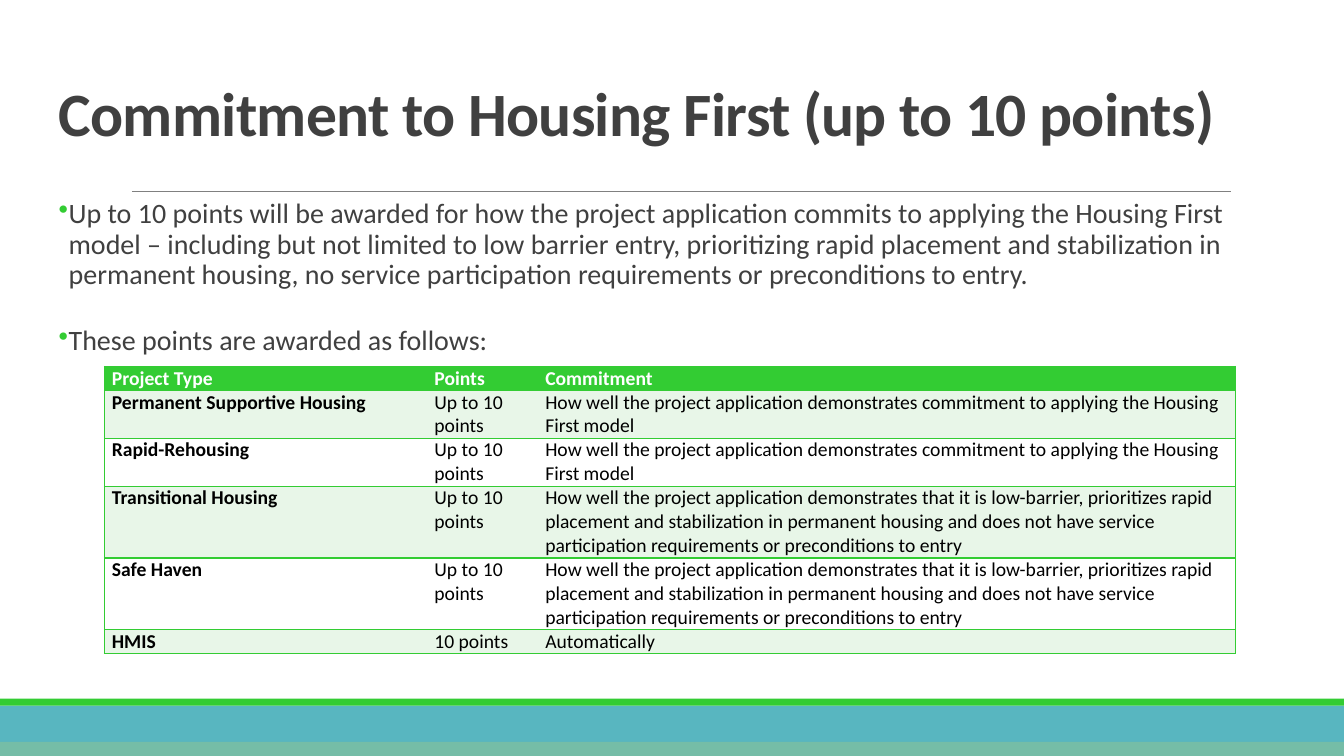
"""Build the slide on scoring the commitment to Housing First."""
from dataclasses import dataclass

import lxml.etree
import pptx
import pptx.dml.color
import pptx.enum.shapes
import pptx.enum.text
import pptx.oxml.ns
import pptx.util

Pt = pptx.util.Pt
qn = pptx.oxml.ns.qn
SubElement = lxml.etree.SubElement


@dataclass(frozen=True)
class Theme:
    font: str = "Calibri"
    green: str = "33CC33"
    pale_green: str = "E8F6E8"
    blue: str = "58B6C0"
    teal: str = "75BDA7"
    gray: str = "808080"
    ink: str = "404040"
    black: str = "000000"
    white: str = "FFFFFF"
    title_size: int = 44
    body_size: int = 20
    table_size: int = 14


theme = Theme()


def rgb(value):
    return pptx.dml.color.RGBColor.from_string(value)


def write(paragraph, text, size, color, bold=False, line_spacing=None,
          after=None, tracking=None, bullet=None):
    if bullet:
        properties = paragraph._p.get_or_add_pPr()
        properties.set("marL", str(Pt(7.2)))
        properties.set("indent", str(-Pt(7.2)))
        bullet_color = SubElement(properties, qn("a:buClr"))
        SubElement(bullet_color, qn("a:srgbClr"), val=theme.green)
        SubElement(properties, qn("a:buChar"), char=bullet)
    if line_spacing is not None:
        paragraph.line_spacing = line_spacing
    if after is not None:
        paragraph.space_after = Pt(after)
    run = paragraph.add_run()
    run.text = text
    run.font.name = theme.font
    run.font.size = Pt(size)
    run.font.bold = bold
    run.font.color.rgb = rgb(color)
    if tracking is not None:
        run._r.get_or_add_rPr().set("spc", str(round(tracking * 100)))


deck = pptx.Presentation()
deck.slide_width = Pt(960)
deck.slide_height = Pt(540)
slide = deck.slides.add_slide(deck.slide_layouts[6])

for top, height, color in [(504, 36, theme.blue), (499, 5, theme.green),
                           (530, 10, theme.teal)]:
    band = slide.shapes.add_shape(pptx.enum.shapes.MSO_SHAPE.RECTANGLE,
                                  0, Pt(top), Pt(960), Pt(height))
    band.shadow.inherit = False
    band.fill.solid()
    band.fill.fore_color.rgb = rgb(color)
    band.line.fill.background()

title_rule = slide.shapes.add_connector(pptx.enum.shapes.MSO_CONNECTOR.STRAIGHT,
                                        Pt(94.3), Pt(136.8), Pt(879), Pt(136.8))
title_rule.line.color.rgb = rgb(theme.gray)
title_rule.line.width = Pt(0.5)
SubElement(title_rule._element.spPr, qn("a:effectLst"))

frames = []
for top, height, anchor in [(46.8, 74.2, pptx.enum.text.MSO_ANCHOR.MIDDLE),
                            (133.2, 347, pptx.enum.text.MSO_ANCHOR.TOP)]:
    frame = slide.shapes.add_textbox(Pt(32.4), Pt(top), Pt(894.2), Pt(height)).text_frame
    frame.word_wrap = True
    frame.vertical_anchor = anchor
    frame.margin_left = frame.margin_right = Pt(9.4)
    frame.margin_top = frame.margin_bottom = Pt(9.4)
    frames.append(frame)
title, body = frames

write(title.paragraphs[0], "Commitment to Housing First (up to 10 points)",
      size=theme.title_size, color=theme.ink, bold=True, line_spacing=0.85, tracking=-0.5)
write(body.paragraphs[0],
      "Up to 10 points will be awarded for how the project application commits to applying "
      "the Housing First model – including but not limited to low barrier entry, prioritizing "
      "rapid placement and stabilization in permanent housing, no service participation "
      "requirements or preconditions to entry.",
      size=theme.body_size, color=theme.ink, line_spacing=0.9, after=25.5, bullet="•")
write(body.add_paragraph(), "These points are awarded as follows:",
      size=theme.body_size, color=theme.ink, line_spacing=0.9, after=2, bullet="•")

applies_model = ("How well the project application demonstrates commitment to applying "
                 "the Housing First model")
low_barrier = ("How well the project application demonstrates that it is low-barrier, "
               "prioritizes rapid placement and stabilization in permanent housing and does "
               "not have service participation requirements or preconditions to entry")
scoring = [
    (1, "Project Type", "Points", "Commitment"),
    (2, "Permanent Supportive Housing", "Up to 10 points", applies_model),
    (2, "Rapid-Rehousing", "Up to 10 points", applies_model),
    (3, "Transitional Housing", "Up to 10 points", low_barrier),
    (3, "Safe Haven", "Up to 10 points", low_barrier),
    (1, "HMIS", "10 points", "Automatically"),
]
line_height = 17.1
column_widths = [230.4, 79.2, 498.2]
line_total = sum(lines for lines, *_ in scoring)
points_table = slide.shapes.add_table(
    len(scoring), len(column_widths), Pt(74.7), Pt(261.8),
    Pt(sum(column_widths)), Pt(line_total * line_height)).table
for column, width in zip(points_table.columns, column_widths):
    column.width = Pt(width)

for row_index, (lines, *texts) in enumerate(scoring):
    points_table.rows[row_index].height = Pt(lines * line_height)
    header = row_index == 0
    row_fill = theme.green if header else (theme.white, theme.pale_green)[row_index % 2]
    for column_index, text in enumerate(texts):
        cell = points_table.cell(row_index, column_index)
        cell.margin_left = cell.margin_right = Pt(5.2)
        cell.margin_top = cell.margin_bottom = 0
        visible_sides = {"lnL": column_index == 0,
                         "lnR": column_index == len(texts) - 1,
                         "lnT": True, "lnB": True}
        for side, visible in visible_sides.items():
            border = SubElement(cell._tc.get_or_add_tcPr(), qn("a:" + side), w=str(Pt(1)))
            if visible:
                border_fill = SubElement(border, qn("a:solidFill"))
                SubElement(border_fill, qn("a:srgbClr"), val=theme.green)
            else:
                SubElement(border, qn("a:noFill"))
        cell.fill.solid()
        cell.fill.fore_color.rgb = rgb(row_fill)
        write(cell.text_frame.paragraphs[0], text, size=theme.table_size,
              color=theme.white if header else theme.black,
              bold=header or column_index == 0)

deck.save("out.pptx")
